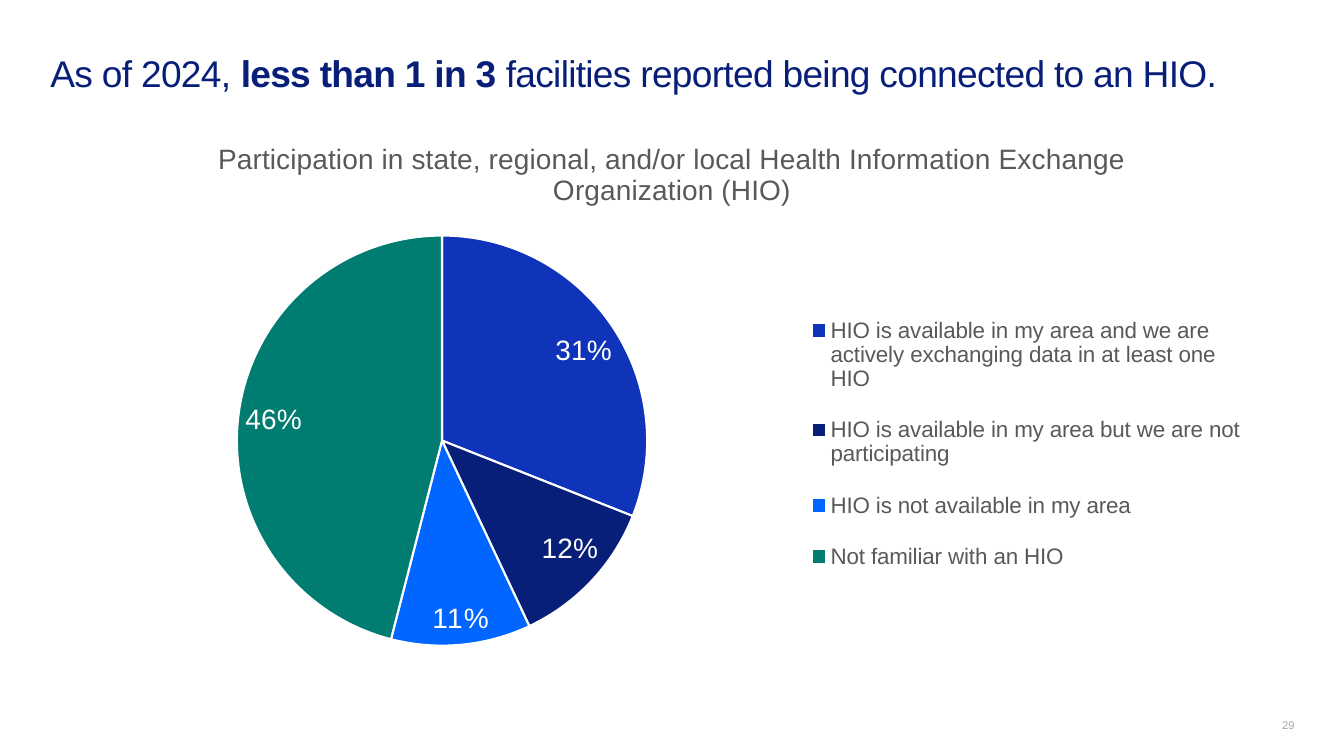
import pptx
import pptx.chart.data
import pptx.dml.color
import pptx.enum.chart
import pptx.enum.text
import pptx.oxml
import pptx.oxml.ns
import pptx.util

Inches = pptx.util.Inches
COLORS = {
    "navy": "081F79",
    "royal": "0F34BA",
    "azure": "0066FF",
    "teal": "007D70",
    "text": "595959",
    "muted": "A1AAB1",
    "white": "FFFFFF",
}


class SlideBuilder:
    face = "Arial"

    def __init__(self, deck):
        self.slide = deck.slides.add_slide(deck.slide_layouts[5])

    def color(self, name):
        return pptx.dml.color.RGBColor.from_string(COLORS[name])

    def style(self, font, size, color, bold=False):
        font.name = self.face
        font.size = pptx.util.Pt(size)
        font.bold = bold
        font.color.rgb = self.color(color)

    def frame(self, shape, anchor, bottom=0):
        frame = shape.text_frame
        frame.word_wrap = True
        frame.auto_size = pptx.enum.text.MSO_AUTO_SIZE.NONE
        frame.vertical_anchor = anchor
        frame.margin_left = frame.margin_right = frame.margin_top = 0
        frame.margin_bottom = Inches(bottom)
        return frame

    def headline(self, parts, left, top, width, height):
        title = self.slide.shapes.title
        title.left, title.top = Inches(left), Inches(top)
        title.width, title.height = Inches(width), Inches(height)
        frame = self.frame(title, pptx.enum.text.MSO_ANCHOR.TOP, 0.05)
        paragraph = frame.paragraphs[0]
        paragraph.alignment = pptx.enum.text.PP_ALIGN.LEFT
        for wording, bold in parts:
            run = paragraph.add_run()
            run.text = wording
            self.style(run.font, 26.5, "navy", bold)
            run.font._element.set("spc", "-50")

    def page_number(self, number, left, top, width, height):
        box = self.slide.shapes.add_textbox(
            Inches(left), Inches(top), Inches(width), Inches(height))
        frame = self.frame(box, pptx.enum.text.MSO_ANCHOR.BOTTOM)
        frame.text = number
        paragraph = frame.paragraphs[0]
        paragraph.alignment = pptx.enum.text.PP_ALIGN.RIGHT
        paragraph.line_spacing = 0.9
        self.style(paragraph.runs[0].font, 8, "muted")

    def layout(self, x, y, w, h, inner=False):
        target = '<c:layoutTarget val="inner"/>' if inner else ""
        sizes = "".join(f'<c:{key} val="{value}"/>' for key, value in
                        (("x", x), ("y", y), ("w", w), ("h", h)))
        return pptx.oxml.parse_xml(
            f'<c:layout {pptx.oxml.ns.nsdecls("c")}><c:manualLayout>{target}'
            f'<c:xMode val="edge"/><c:yMode val="edge"/>{sizes}'
            '</c:manualLayout></c:layout>')

    def pie(self, heading, shares, left, top, width, height):
        data = pptx.chart.data.CategoryChartData(number_format="0%")
        data.categories = [answer for answer, share, color in shares]
        data.add_series("Series 1", [share for answer, share, color in shares])
        chart = self.slide.shapes.add_chart(
            pptx.enum.chart.XL_CHART_TYPE.PIE, Inches(left), Inches(top),
            Inches(width), Inches(height), data).chart
        self.style(chart.font, 10, "text")

        chart.has_title = True
        chart.chart_title.text_frame.text = heading
        chart.chart_title.include_in_layout = False
        heading_run = chart.chart_title.text_frame.paragraphs[0].runs[0]
        self.style(heading_run.font, 20, "text")

        chart.has_legend = True
        legend = chart.legend
        legend.position = pptx.enum.chart.XL_LEGEND_POSITION.RIGHT
        legend.include_in_layout = False
        self.style(legend.font, 16, "text")
        legend_xml = legend._element
        for automatic in legend_xml.findall(pptx.oxml.ns.qn("c:layout")):
            legend_xml.remove(automatic)
        legend_xml.find(pptx.oxml.ns.qn("c:legendPos")).addnext(
            self.layout(0.61, 0.3, 0.35, 0.53))

        plot = chart.plots[0]
        plot.vary_by_categories = True
        plot_area = plot._element.getparent()
        for automatic in plot_area.findall(pptx.oxml.ns.qn("c:layout")):
            plot_area.remove(automatic)
        plot_area.insert(0, self.layout(0.15, 0.2, 0.33, 0.72, inner=True))

        series = plot.series[0]
        for index, (answer, share, color) in enumerate(shares):
            wedge = series.points[index].format
            wedge.fill.solid()
            wedge.fill.fore_color.rgb = self.color(color)
            wedge.line.color.rgb = self.color("white")
            wedge.line.width = pptx.util.Pt(1.5)

        labels = series.data_labels
        labels.show_value = True
        labels.show_percentage = False
        labels.number_format = "0%"
        labels.number_format_is_linked = False
        labels.position = pptx.enum.chart.XL_LABEL_POSITION.BEST_FIT
        self.style(labels.font, 20, "white")


def main():
    deck = pptx.Presentation()
    deck.slide_width, deck.slide_height = Inches(13.33), Inches(7.5)
    builder = SlideBuilder(deck)
    builder.page_number("29", 12.54, 6.89, 0.3, 0.37)
    builder.headline([
        ("As of 2024, ", False),
        ("less than 1 in 3", True),
        (" facilities reported being connected to an HIO.", False),
    ], 0.5, 0.5, 12.34, 0.97)
    builder.pie(
        "Participation in state, regional, and/or local "
        "Health Information Exchange Organization (HIO)",
        [
            ("HIO is available in my area and we are actively exchanging "
             "data in at least one HIO", 0.31, "royal"),
            ("HIO is available in my area but we are not participating",
             0.12, "navy"),
            ("HIO is not available in my area", 0.11, "azure"),
            ("Not familiar with an HIO", 0.46, "teal"),
        ], 0.5, 1.18, 12.33, 5.7)
    deck.save("out.pptx")


if __name__ == "__main__":
    main()
